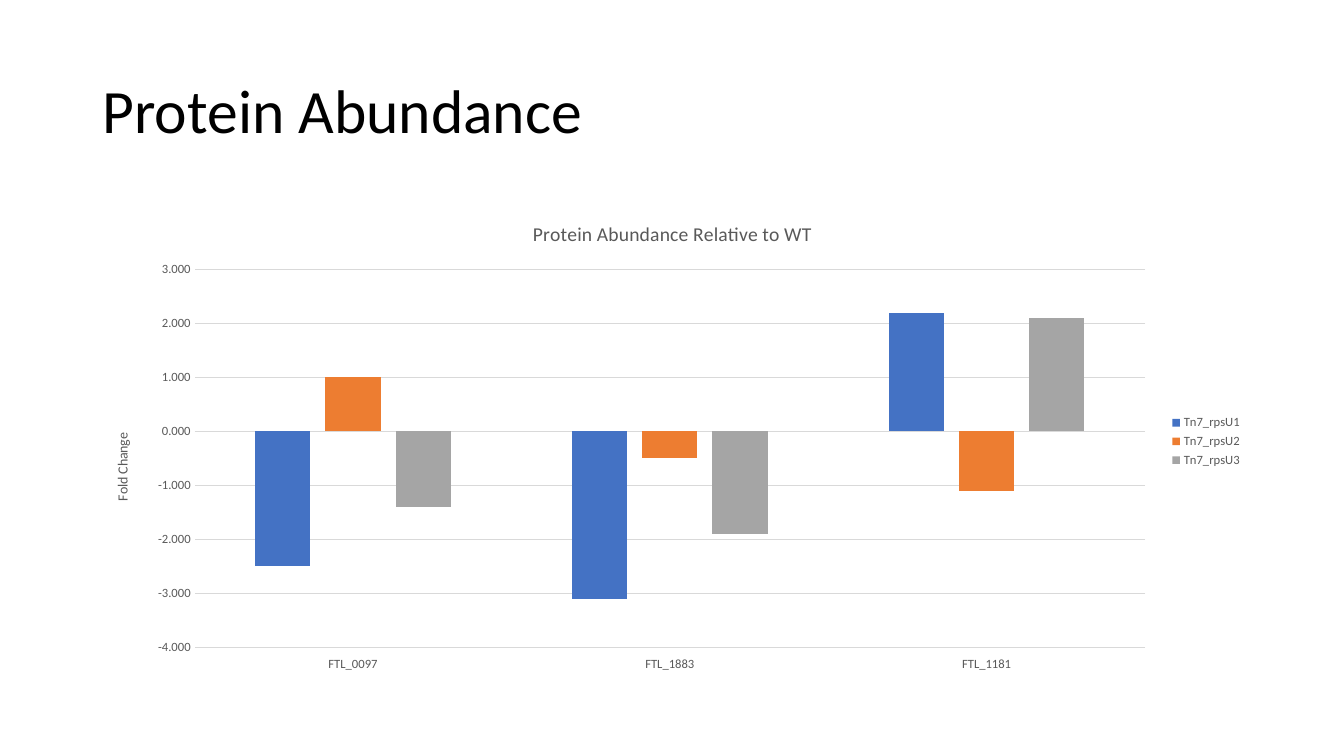
from pptx import Presentation
from pptx.chart.data import CategoryChartData
from pptx.dml.color import RGBColor
from pptx.enum.chart import (XL_CHART_TYPE, XL_LEGEND_POSITION,
                             XL_TICK_LABEL_POSITION, XL_TICK_MARK)
from pptx.enum.text import MSO_ANCHOR
from pptx.util import Inches, Pt

COLUMN = XL_CHART_TYPE.COLUMN_CLUSTERED
RIGHT = XL_LEGEND_POSITION.RIGHT
LOW = XL_TICK_LABEL_POSITION.LOW
NO_TICK = XL_TICK_MARK.NONE
MIDDLE = MSO_ANCHOR.MIDDLE

FONT = "Calibri"
BLACK = RGBColor(0x00, 0x00, 0x00)
GREY = RGBColor(0x59, 0x59, 0x59)
RULE = RGBColor(0xD9, 0xD9, 0xD9)
BLUE = RGBColor(0x44, 0x72, 0xC4)
ORANGE = RGBColor(0xED, 0x7D, 0x31)
SILVER = RGBColor(0xA5, 0xA5, 0xA5)

GENES = ["FTL_0097", "FTL_1883", "FTL_1181"]
STRAINS = [
    ("Tn7_rpsU1", (-2.5, -3.1, 2.2), BLUE),
    ("Tn7_rpsU2", (1, -0.5, -1.1), ORANGE),
    ("Tn7_rpsU3", (-1.4, -1.9, 2.1), SILVER),
]


def set_font(font, size, color, bold=False):
    font.name = FONT
    font.size = Pt(size)
    font.bold = bold
    font.color.rgb = color


def set_line(line, color):
    line.color.rgb = color
    line.width = Pt(0.75)


def add_run(para, text, size, color):
    run = para.add_run()
    run.text = text
    set_font(run.font, size, color)


def add_heading(slide, text):
    box = slide.shapes.add_textbox(Inches(0.92), Inches(0.4),
                                   Inches(11.5), Inches(1.45))
    frame = box.text_frame
    frame.word_wrap = True
    frame.vertical_anchor = MIDDLE
    para = frame.paragraphs[0]
    para.line_spacing = 0.9
    add_run(para, text, 44, BLACK)


def style_axis(axis):
    axis.major_tick_mark = NO_TICK
    axis.minor_tick_mark = NO_TICK
    set_font(axis.tick_labels.font, 9, GREY)


def style_axes(chart):
    # Gene names stay below the negative bars
    genes = chart.category_axis
    style_axis(genes)
    genes.tick_label_position = LOW
    set_line(genes.format.line, RULE)

    # Fold change scale
    fold = chart.value_axis
    style_axis(fold)
    fold.minimum_scale, fold.maximum_scale, fold.major_unit = -4, 3, 1
    fold.tick_labels.number_format = "0.000"
    fold.tick_labels.number_format_is_linked = False
    fold.format.line.fill.background()
    fold.has_major_gridlines = True
    set_line(fold.major_gridlines.format.line, RULE)
    para = fold.axis_title.text_frame.paragraphs[0]
    add_run(para, "Fold Change", 10, GREY)


def style_bars(plot):
    plot.gap_width = 219
    plot.overlap = -27
    plot.vary_by_categories = False
    for series, (_, _, color) in zip(plot.series, STRAINS):
        series.invert_if_negative = False
        series.format.fill.solid()
        series.format.fill.fore_color.rgb = color


def add_bars(slide):
    data = CategoryChartData(number_format="0.000")
    data.categories = GENES
    for name, values, _ in STRAINS:
        data.add_series(name, values)
    frame = slide.shapes.add_chart(COLUMN, Inches(0.92), Inches(2),
                                   Inches(11.5), Inches(4.76), data)
    chart = frame.chart
    set_font(chart.font, 10, BLACK)

    # Chart title
    chart.has_title = True
    chart.chart_title.include_in_layout = False
    para = chart.chart_title.text_frame.paragraphs[0]
    add_run(para, "Protein Abundance Relative to WT", 14, GREY)

    # Legend
    chart.has_legend = True
    chart.legend.position = RIGHT
    chart.legend.include_in_layout = False
    set_font(chart.legend.font, 9, GREY)

    style_axes(chart)
    style_bars(chart.plots[0])


def main():
    deck = Presentation()
    deck.slide_width = Inches(13.33)
    deck.slide_height = Inches(7.5)
    slide = deck.slides.add_slide(deck.slide_layouts[6])
    add_heading(slide, "Protein Abundance")
    add_bars(slide)
    deck.save("out.pptx")


if __name__ == "__main__":
    main()
